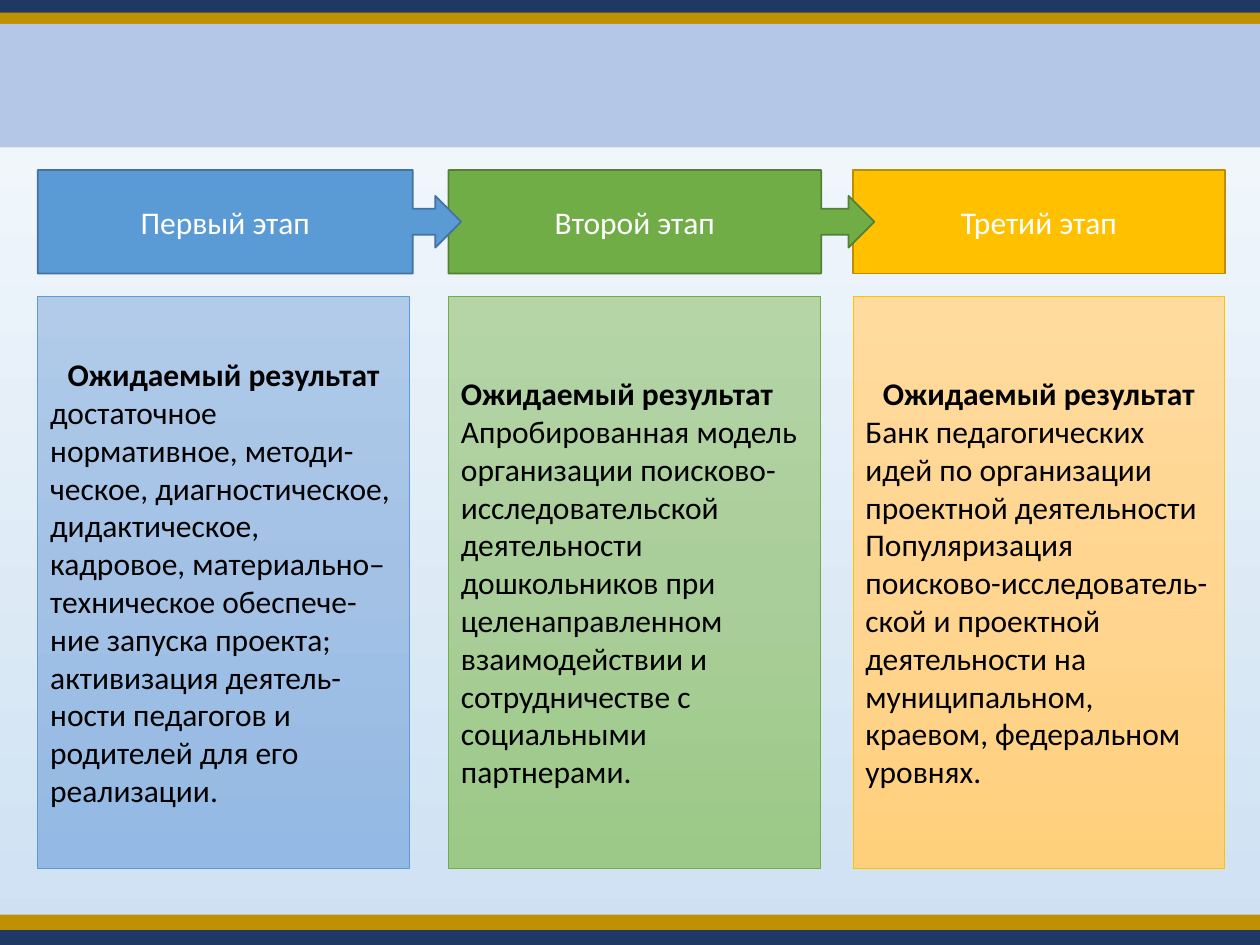
"""Build a slide with three project stages and their expected results."""
import copy

import pptx
import pptx.dml.color
import pptx.enum.shapes
import pptx.enum.text
import pptx.oxml.ns
import pptx.util

Inches = pptx.util.Inches
SHAPES = pptx.enum.shapes.MSO_SHAPE
ALIGN = pptx.enum.text.PP_ALIGN
FONT, SIZE = "Calibri", 18
BACKGROUND = ["F7FAFD", "CEE1F2"]
RESULT_TITLE = "Ожидаемый результат"
BANDS = [
    (0, 0.12, "203864"),
    (0.1, 0.12, "BF9000"),
    (7.38, 0.12, "203864"),
    (7.26, 0.12, "BF9000"),
    (0.19, 0.98, "B4C7E7"),
]
STAGES = [
    {
        "name": "Первый этап", "left": 0.3, "width": 3.36, "body_share": 0.886,
        "fill": "5B9BD5", "line": "43739E", "shades": ["B1CBE9", "A3C1E5", "93B9E4"],
        "title_align": ALIGN.CENTER,
        "results": [
            "достаточное нормативное, методи-ческое, диагностическое, дидактическое, "
            "кадровое, материально–техническое обеспече-ние запуска проекта; активизация "
            "деятель-ности педагогов и родителей для его реализации."
        ],
    },
    {
        "name": "Второй этап", "left": 3.56, "width": 3.38, "body_share": 0.875,
        "fill": "70AD47", "line": "538035", "shades": ["B5D5A7", "AACE9A", "9CC987"],
        "title_align": ALIGN.LEFT,
        "results": [
            "Апробированная модель организации поисково-исследовательской деятельности "
            "дошкольников при целенаправленном взаимодействии и сотрудничестве с "
            "социальными партнерами."
        ],
    },
    {
        "name": "Третий этап", "left": 6.77, "width": 2.95, "body_share": None,
        "fill": "FFC000", "line": "BD8E00", "shades": ["FFDB9E", "FFD590", "FFD07C"],
        "title_align": ALIGN.CENTER,
        "results": [
            "Банк педагогических идей по организации проектной деятельности",
            "Популяризация поисково-исследователь-ской и проектной деятельности на "
            "муниципальном, краевом, федеральном уровнях.",
        ],
    },
]
HEADER_TOP, HEADER_HEIGHT = 1.35, 0.82
RESULT_TOP, RESULT_WIDTH, RESULT_HEIGHT = 2.35, 2.95, 4.54


def rgb(value):
    return pptx.dml.color.RGBColor.from_string(value)


def paint_gradient(fill, element, colors):
    fill.gradient()
    fill.gradient_angle = 270
    stops = element.find(".//" + pptx.oxml.ns.qn("a:gsLst"))
    for _ in colors[2:]:
        stops.append(copy.deepcopy(stops[0]))
    for index, (stop, color) in enumerate(zip(fill.gradient_stops, colors)):
        stop.position = index / (len(colors) - 1)
        stop.color.rgb = rgb(color)


def add_block(page, kind, place, fill, line=None, line_width=1):
    block = page.shapes.add_shape(kind, *map(Inches, place))
    block.shadow.inherit = False
    if isinstance(fill, list):
        paint_gradient(block.fill, block.element, fill)
    else:
        block.fill.solid()
        block.fill.fore_color.rgb = rgb(fill)
    if line:
        block.line.color.rgb = rgb(line)
        block.line.width = pptx.util.Pt(line_width)
    else:
        block.line.fill.background()
    return block


def write(block, rows, color):
    frame = block.text_frame
    frame.word_wrap = True
    frame.vertical_anchor = pptx.enum.text.MSO_ANCHOR.MIDDLE
    for index, (text, align, bold) in enumerate(rows):
        para = frame.add_paragraph() if index else frame.paragraphs[0]
        para.text, para.alignment = text, align
        para.font.name, para.font.size = FONT, pptx.util.Pt(SIZE)
        para.font.bold, para.font.color.rgb = bold, rgb(color)


def add_header(page, stage):
    share = stage["body_share"]
    kind = SHAPES.RIGHT_ARROW_CALLOUT if share else SHAPES.RECTANGLE
    place = (stage["left"], HEADER_TOP, stage["width"], HEADER_HEIGHT)
    header = add_block(page, kind, place, stage["fill"], stage["line"])
    if share:
        for index, value in enumerate((0.25, 0.25, 0.25, share)):
            header.adjustments[index] = value
    write(header, [(stage["name"], ALIGN.CENTER, False)], "FFFFFF")


def add_result(page, stage):
    place = (stage["left"], RESULT_TOP, RESULT_WIDTH, RESULT_HEIGHT)
    box = add_block(page, SHAPES.RECTANGLE, place, stage["shades"], stage["fill"], 0.5)
    rows = [(RESULT_TITLE, stage["title_align"], True)]
    rows += [(text, ALIGN.LEFT, False) for text in stage["results"]]
    write(box, rows, "000000")


def main():
    deck = pptx.Presentation()
    deck.slide_width, deck.slide_height = Inches(10), Inches(7.5)
    page = deck.slides.add_slide(deck.slide_layouts[6])
    paint_gradient(page.background.fill, page.element, BACKGROUND)
    for top, height, color in BANDS:
        add_block(page, SHAPES.RECTANGLE, (0, top, 10, height), color)
    for stage in reversed(STAGES):
        add_header(page, stage)
    for stage in STAGES:
        add_result(page, stage)
    deck.save("out.pptx")


if __name__ == "__main__":
    main()
